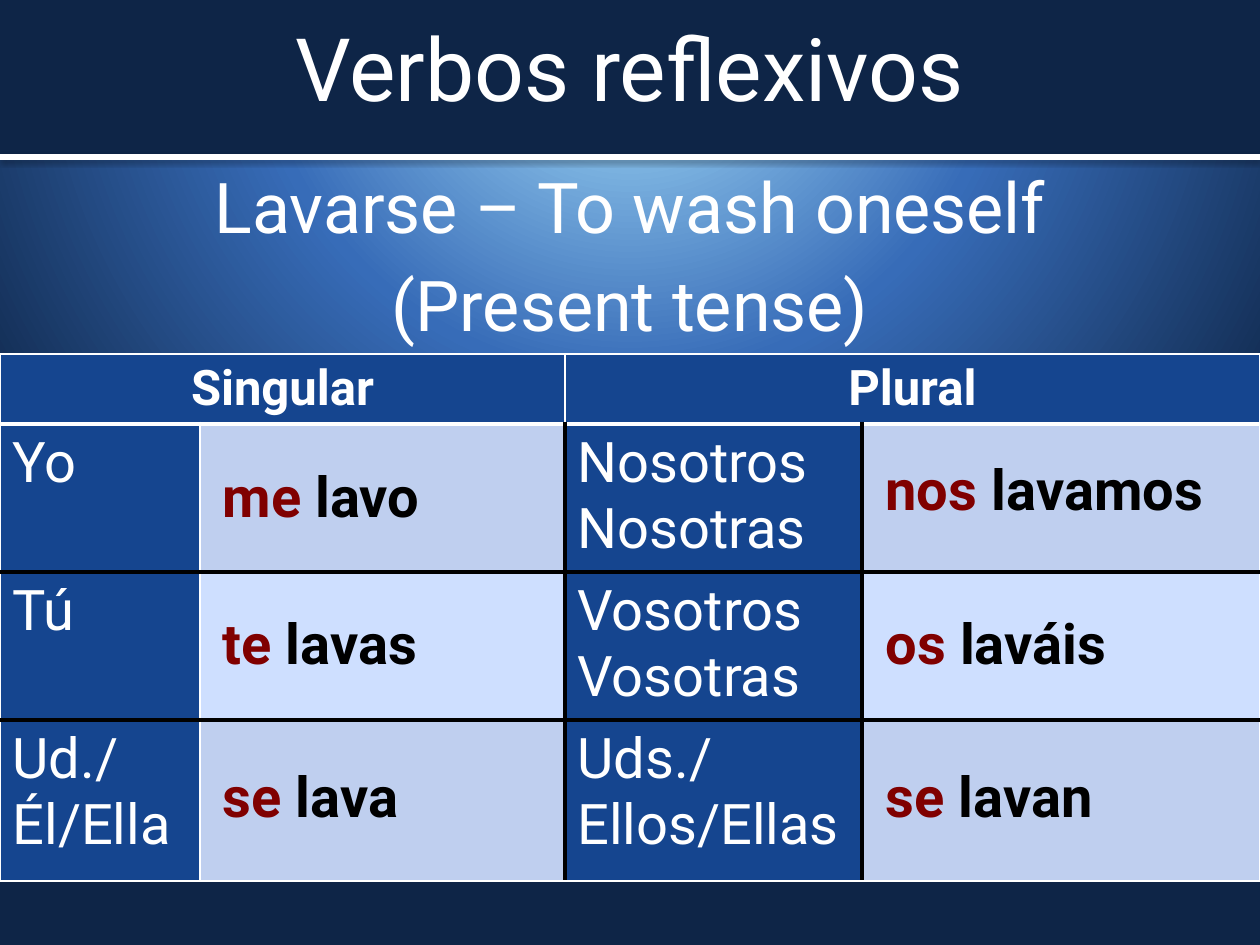
from lxml import etree
from pptx import Presentation
from pptx.dml.color import RGBColor
from pptx.enum.shapes import MSO_CONNECTOR, MSO_SHAPE
from pptx.enum.text import MSO_ANCHOR, MSO_AUTO_SIZE, PP_ALIGN
from pptx.oxml import parse_xml
from pptx.oxml.ns import nsdecls, qn
from pptx.util import Emu, Pt

FONT = "Roboto"
WHITE = RGBColor(0xFF, 0xFF, 0xFF)
BLACK = RGBColor(0x00, 0x00, 0x00)
NAVY = RGBColor(0x0E, 0x25, 0x47)
SKY = RGBColor(0xB1, 0xE9, 0xFF)
MID_BLUE = RGBColor(0x37, 0x6C, 0xB8)
HEADER_BLUE = RGBColor(0x15, 0x45, 0x8F)
BANDS = [RGBColor(0xBF, 0xCF, 0xEF), RGBColor(0xCE, 0xDF, 0xFF)]
MAROON = RGBColor(0x80, 0x00, 0x00)
NO_STYLE = "{2D5ABB26-0587-4C30-8999-92F81FD0307C}"
PX = 914400 / 126


def add_plain_table(left, top, column_widths, row_heights):
    """Add a table without any style, sized in px."""
    box = [Emu(round(n * PX)) for n in (left, top, sum(column_widths), sum(row_heights))]
    table = slide.shapes.add_table(len(row_heights), len(column_widths), *box).table
    table.first_row = table.horz_banding = False
    table._tbl.tblPr.find(qn("a:tableStyleId")).text = NO_STYLE
    for column, width in zip(table.columns, column_widths):
        column.width = Emu(round(width * PX))
    for row, height in zip(table.rows, row_heights):
        row.height = Emu(round(height * PX))
    return table


def set_font(paragraph, size, color=None, bold=False):
    paragraph.font.name = FONT
    paragraph.font.size = Pt(size)
    paragraph.font.bold = bold
    if color is not None:
        paragraph.font.color.rgb = color


presentation = Presentation()
presentation.slide_width = Emu(round(1260 * PX))
presentation.slide_height = Emu(round(945 * PX))
slide = presentation.slides.add_slide(presentation.slide_layouts[0])

# Background: circular gradient centred above the slide
background = slide.background.fill
background.gradient()
gradient = background._fill._gradFill
for child in list(gradient):
    gradient.remove(child)
stops = "".join(
    f'<a:gs pos="{position}"><a:srgbClr val="{color}"/></a:gs>'
    for position, color in ((0, SKY), (48000, MID_BLUE), (100000, NAVY))
)
gradient.append(parse_xml(f"<a:gsLst {nsdecls('a')}>{stops}</a:gsLst>"))
gradient.append(parse_xml(
    f'<a:path {nsdecls("a")} path="circle">'
    '<a:fillToRect l="50000" t="-80000" r="50000" b="180000"/></a:path>'
))

# Title band, placed behind the placeholders
band = slide.shapes.add_shape(MSO_SHAPE.RECTANGLE, 0, 0, presentation.slide_width, round(157 * PX))
band.shadow.inherit = False
band.fill.solid()
band.fill.fore_color.rgb = NAVY
band.line.fill.background()
slide.shapes._spTree.insert(2, band._element)

# Title and subtitle
title, subtitle = slide.shapes.title, slide.placeholders[1]
for shape, top, height, anchor, size, text in (
    (title, 0, 134, MSO_ANCHOR.MIDDLE, 50, "Verbos reflexivos"),
    (subtitle, 157, 655, MSO_ANCHOR.TOP, 40, "Lavarse – To wash oneself\n(Present tense)"),
):
    shape.left, shape.top = 0, Emu(round(top * PX))
    shape.width, shape.height = presentation.slide_width, Emu(round(height * PX))
    frame = shape.text_frame
    frame.text = text
    frame.auto_size = MSO_AUTO_SIZE.NONE
    frame.vertical_anchor = anchor
    for paragraph in frame.paragraphs:
        paragraph.alignment = PP_ALIGN.CENTER
        set_font(paragraph, size, WHITE)
for paragraph in subtitle.text_frame.paragraphs:
    paragraph.space_before = Pt(8)

# White rule with a soft shadow under the band
rule = slide.shapes.add_connector(
    MSO_CONNECTOR.STRAIGHT, 0, round(157 * PX), presentation.slide_width, round(157 * PX))
rule.line.color.rgb = WHITE
rule.line.width = Pt(3)
rule._element.spPr.append(parse_xml(
    f'<a:effectLst {nsdecls("a")}><a:outerShdw blurRad="40000" dist="20000" dir="5400000" '
    'rotWithShape="0"><a:srgbClr val="000000"><a:alpha val="38000"/></a:srgbClr>'
    "</a:outerShdw></a:effectLst>"
))

# Pronoun table
ROWS = [
    ["Singular", "", "Plural", ""],
    ["Yo", "", "Nosotros\nNosotras", ""],
    ["Tú", "", "Vosotros\nVosotras", ""],
    ["Ud./Él/Ella", "", "Uds./Ellos/Ellas", ""],
]
THIN, THICK, HEAVY = (WHITE, 1), (WHITE, 3), (BLACK, 3)
HORIZONTAL = [THIN, THICK, HEAVY, HEAVY, THIN]
VERTICAL = [THIN, THIN, HEAVY, HEAVY, THIN]
pronouns = add_plain_table(0, 354, [200, 365, 297, 398], [70, 148, 148, 161])
for r, texts in enumerate(ROWS):
    for c, text in enumerate(texts):
        cell = pronouns.cell(r, c)
        is_header = r == 0
        sides = THIN if is_header else VERTICAL[c], THIN if is_header else VERTICAL[c + 1]
        properties = cell._tc.get_or_add_tcPr()
        for tag, (color, width) in zip(
            ("a:lnL", "a:lnR", "a:lnT", "a:lnB"), (*sides, HORIZONTAL[r], HORIZONTAL[r + 1])
        ):
            border = etree.SubElement(properties, qn(tag), w=str(Pt(width)))
            fill = etree.SubElement(border, qn("a:solidFill"))
            etree.SubElement(fill, qn("a:srgbClr"), val=str(color))
        cell.fill.solid()
        cell.fill.fore_color.rgb = HEADER_BLUE if is_header or c % 2 == 0 else BANDS[(r - 1) % 2]
        if text:
            cell.text = text
            for paragraph in cell.text_frame.paragraphs:
                paragraph.alignment = PP_ALIGN.CENTER if is_header else PP_ALIGN.LEFT
                set_font(paragraph, 28 if is_header else 32, WHITE, is_header)
for c in (0, 2):
    pronouns.cell(0, c).merge(pronouns.cell(0, c + 1))

# Verb forms: one single-cell table each
for left, top, width, height, pronoun, verb in (
    (210, 459, 310, 79, "me", "lavo"),
    (210, 606, 295, 79, "te", "lavas"),
    (210, 759, 310, 84, "se", "lava"),
    (873, 452, 355, 86, "nos", "lavamos"),
    (873, 606, 318, 79, "os", "laváis"),
    (873, 759, 302, 79, "se", "lavan"),
):
    cell = add_plain_table(left, top, [width], [height]).cell(0, 0)
    cell.fill.background()
    paragraph = cell.text_frame.paragraphs[0]
    set_font(paragraph, 32, bold=True)
    for text, color in ((pronoun + " ", MAROON), (verb, BLACK)):
        run = paragraph.add_run()
        run.text = text
        run.font.color.rgb = color

presentation.save("out.pptx")
